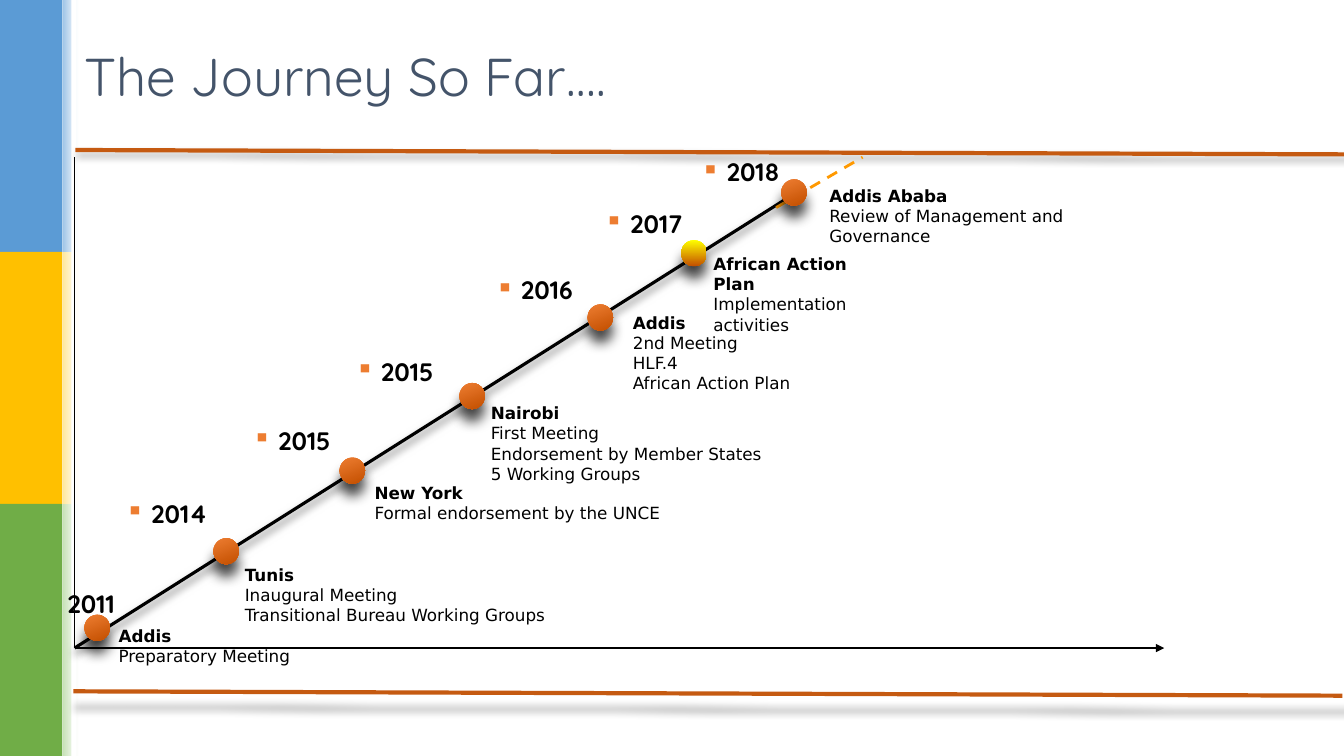
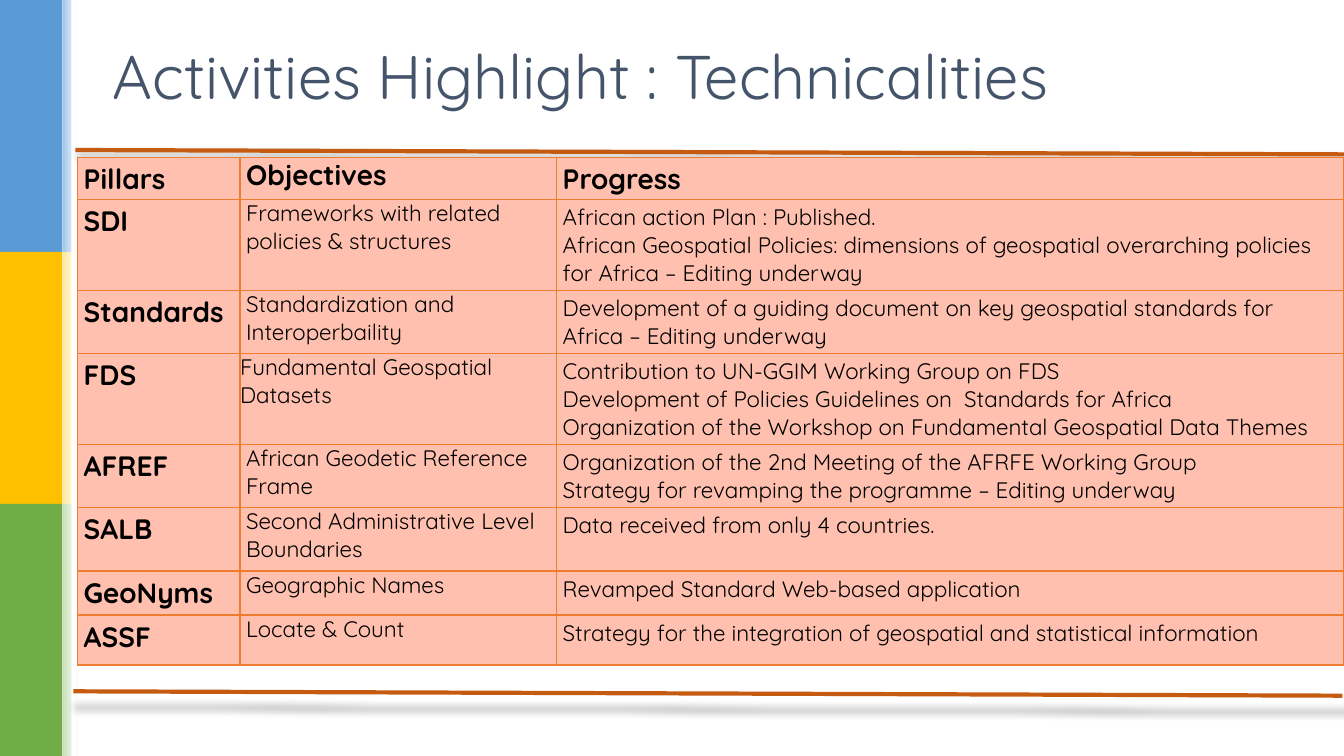
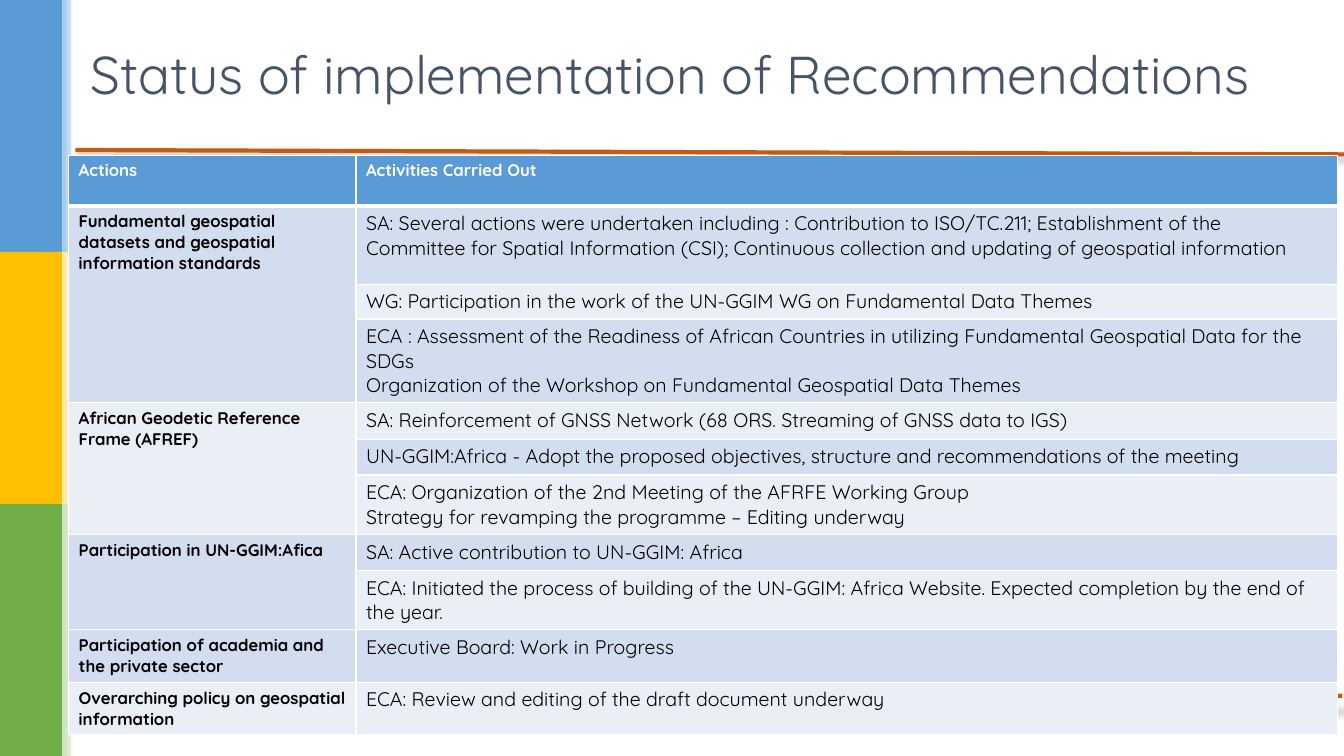
"""Build three slides on the journey, activities and status of a geospatial programme."""
from dataclasses import dataclass
from typing import Any, Optional

import lxml.etree
import pptx
import pptx.dml.color
import pptx.enum.dml
import pptx.enum.shapes
import pptx.enum.text
import pptx.oxml.ns
import pptx.util

Cm = pptx.util.Cm
Pt = pptx.util.Pt
RGBColor = pptx.dml.color.RGBColor
SHAPE = pptx.enum.shapes.MSO_SHAPE
ANCHOR = pptx.enum.text.MSO_ANCHOR
qn = pptx.oxml.ns.qn

BLACK = RGBColor(0x00, 0x00, 0x00)
WHITE = RGBColor(0xFF, 0xFF, 0xFF)
SLATE = RGBColor(0x44, 0x54, 0x6A)
BLUE = RGBColor(0x5B, 0x9B, 0xD5)
GOLD = RGBColor(0xFF, 0xC0, 0x00)
GREEN = RGBColor(0x70, 0xAD, 0x47)
PALE_BLUE = RGBColor(0x9D, 0xC3, 0xE6)
PALE_GOLD = RGBColor(0xFF, 0xE6, 0x99)
PALE_GREEN = RGBColor(0xC5, 0xE0, 0xB4)
RUST = RGBColor(0xC5, 0x5A, 0x11)
ORANGE = RGBColor(0xED, 0x7D, 0x31)
BURNT = RGBColor(0xC3, 0x4F, 0x00)
YELLOW = RGBColor(0xFF, 0xFF, 0x00)
AMBER = RGBColor(0xFF, 0x99, 0x00)
PEACH = RGBColor(0xFF, 0xC0, 0xAF)
ICE = RGBColor(0xD2, 0xDE, 0xEF)
MIST = RGBColor(0xEA, 0xEF, 0xF7)

SANS = "DejaVu Sans"
ROUND = "Quicksand"
WIDE, HIGH = 33.87, 19.05
BAND = 1.57


@dataclass(frozen=True)
class Style:
    """Hold the look of a run."""
    size: float
    color: RGBColor = BLACK
    bold: bool = False
    font: str = ROUND


@dataclass(frozen=True)
class Shade:
    """Hold a soft shadow: blur and drop in points, strength and scale in percent."""
    blur: float
    drop: float
    alpha: int
    scale: int = 100


@dataclass(frozen=True)
class Stop:
    """Hold one step of the journey, with places in centimetres."""
    year: str
    dot: tuple[float, float]
    date: tuple[float, float]
    note: tuple[float, float, float]
    place: str
    facts: tuple[str, ...]
    glow: RGBColor = ORANGE
    angle: int = 291
    mark: bool = True


@dataclass(frozen=True)
class Pillar:
    """Hold one row of the pillar table."""
    name: str
    goal: str
    steps: tuple[str, ...]
    high: float
    inset: float = 0.15


@dataclass(frozen=True)
class Action:
    """Hold one action with the text and height of each of its rows."""
    name: str
    rows: tuple[tuple[float, tuple[str, ...]], ...]


RULE_SHADE = Shade(5, 1, 32, 102)
PATH_SHADE = Shade(6, 3, 60)
DOT_SHADE = Shade(9, 9, 70)
YEAR = Style(18, bold=True)
PLACE = Style(12, bold=True, font=SANS)
FACT = Style(12, font=SANS)

STOPS = (
    Stop("2011", (2.13, 15.49), (1.45, 14.78), (2.74, 15.65, 6.02), "Addis",
         ("Preparatory Meeting",), mark=False),
    Stop("2014", (5.38, 13.56), (2.92, 12.52), (5.92, 14.1, 9), "Tunis",
         ("Inaugural Meeting", "Transitional Bureau Working Groups")),
    Stop("2015", (8.56, 11.53), (6.12, 10.67), (9.19, 12.04, 9.5), "New York",
         ("Formal endorsement by the UNCE",)),
    Stop("2015", (11.58, 9.65), (8.71, 8.94), (12.12, 10.03, 7.87), "Nairobi",
         ("First Meeting", "Endorsement by Member States", "5 Working Groups")),
    Stop("2016", (14.81, 7.67), (12.24, 6.88), (15.7, 7.75, 8.46), "Addis",
         ("2nd Meeting", "HLF.4", "African Action Plan")),
    Stop("2017", (17.17, 6.05), (14.99, 5.21), (17.73, 6.27, 4.85), "African Action Plan",
         ("Implementation activities",), YELLOW, 270),
    Stop("2018", (19.69, 4.52), (17.42, 3.91), (20.65, 4.55, 7.87), "Addis Ababa",
         ("Review of Management and Governance",)),
)

PILLARS = (
    Pillar("SDI", "Frameworks with related policies & structures", (
        "African action Plan : Published.",
        "African Geospatial Policies: dimensions of geospatial overarching policies "
        "for Africa – Editing underway"), 2.3),
    Pillar("Standards", "Standardization and Interoperbaility", (
        "Development of a guiding document on key geospatial standards for Africa "
        "– Editing underway",), 1.58),
    Pillar("FDS", "Fundamental Geospatial Datasets", (
        "Contribution to UN-GGIM Working Group on FDS",
        "Development of Policies Guidelines on  Standards for Africa",
        "Organization of the Workshop on Fundamental Geospatial Data Themes"), 2.3, 0),
    Pillar("AFREF", "African Geodetic Reference Frame", (
        "Organization of the 2nd Meeting of the AFRFE Working Group",
        "Strategy for revamping the programme – Editing underway"), 1.58),
    Pillar("SALB", "Second Administrative Level Boundaries", (
        "Data received from only 4 countries.",), 1.61),
    Pillar("GeoNyms", "Geographic Names", ("Revamped Standard Web-based application",), 1.11),
    Pillar("ASSF", "Locate & Count", (
        "Strategy for the integration of geospatial and statistical information",), 1.26),
)

ACTIONS = (
    Action("Fundamental geospatial datasets and geospatial information standards", (
        (1.97, ("SA: Several actions were undertaken including : Contribution to ISO/TC.211; "
                "Establishment of the Committee for Spatial Information (CSI); Continuous "
                "collection and updating of geospatial information",)),
        (0.88, ("WG: Participation in the work of the UN-GGIM WG on Fundamental Data Themes",)),
        (2.1, ("ECA : Assessment of the Readiness of African Countries in utilizing "
               "Fundamental Geospatial Data for the SDGs",
               "Organization of the Workshop on Fundamental Geospatial Data Themes")))),
    Action("African Geodetic Reference Frame (AFREF)", (
        (0.92, ("SA: Reinforcement of GNSS Network (68 ORS. Streaming of GNSS data to IGS)",)),
        (0.9, ("UN-GGIM:Africa - Adopt the proposed objectives, structure and "
               "recommendations of the meeting",)),
        (1.5, ("ECA: Organization of the 2nd Meeting of the AFRFE Working Group",
               "Strategy for revamping the programme – Editing underway")))),
    Action("Participation in UN-GGIM:Afica", (
        (0.91, ("SA: Active contribution to UN-GGIM: Africa",)),
        (1.49, ("ECA: Initiated the process of building of the UN-GGIM: Africa Website. "
                "Expected completion by the end of the year.",)))),
    Action("Participation of academia and the private sector", (
        (1.32, ("Executive Board: Work in Progress",)),)),
    Action("Overarching policy on geospatial information", (
        (1.32, ("ECA: Review and editing of the draft document underway",)),)),
)


def add_node(root: Any, tag: str, **attrs: object) -> Any:
    """Append a drawing element with the given attributes."""
    return lxml.etree.SubElement(root, qn(tag), {key: str(val) for key, val in attrs.items()})


def add_shade(shape: Any, shade: Optional[Shade]) -> None:
    """Give a shape or line its shadow, or none."""
    props = shape._element.spPr
    for old in props.findall(qn("a:effectLst")):
        props.remove(old)
    effects = add_node(props, "a:effectLst")
    if shade:
        scale = shade.scale * 1000
        outer = add_node(effects, "a:outerShdw", blurRad=Pt(shade.blur), dist=Pt(shade.drop),
                         dir=5400000, sx=scale, sy=scale, algn="ctr", rotWithShape=0)
        add_node(add_node(outer, "a:srgbClr", val=BLACK), "a:alpha", val=shade.alpha * 1000)


def add_line(slide: Any, start: tuple[float, float], end: tuple[float, float],
             color: RGBColor, width: float, shade: Optional[Shade] = None) -> Any:
    """Draw a straight line."""
    line = slide.shapes.add_connector(pptx.enum.shapes.MSO_CONNECTOR.STRAIGHT,
                                      *(Cm(v) for v in start + end))
    line.line.color.rgb = color
    line.line.width = Pt(width)
    add_shade(line, shade)
    return line


def add_block(slide: Any, kind: Any, place: tuple[float, float, float, float],
              color: RGBColor, fade: Optional[RGBColor] = None, angle: int = 0) -> Any:
    """Draw a borderless shape in one colour or fading to a second."""
    block = slide.shapes.add_shape(kind, *(Cm(v) for v in place))
    block.shadow.inherit = False
    block.line.fill.background()
    if fade is None:
        block.fill.solid()
        block.fill.fore_color.rgb = color
    else:
        block.fill.gradient()
        block.fill.gradient_angle = angle
        for stop, tint in zip(block.fill.gradient_stops, (color, fade)):
            stop.color.rgb = tint
    return block


def add_text(frame: Any, lines: list[tuple[str, Style]]) -> None:
    """Fill a text frame with one run to a paragraph."""
    frame.word_wrap = True
    for spot, (words, style) in enumerate(lines):
        para = frame.add_paragraph() if spot else frame.paragraphs[0]
        run = para.add_run()
        run.text = words
        run.font.name = style.font
        run.font.size = Pt(style.size)
        run.font.bold = style.bold
        run.font.color.rgb = style.color


def add_box(slide: Any, place: tuple[float, float, float, float],
            lines: list[tuple[str, Style]]) -> Any:
    """Add a text box and return its frame."""
    frame = slide.shapes.add_textbox(*(Cm(v) for v in place)).text_frame
    add_text(frame, lines)
    return frame


def add_title(slide: Any, words: str, left: float, top: float, width: float, size: float) -> None:
    """Add the slide title."""
    frame = add_box(slide, (left, top, width, 3.68), [(words, Style(size, SLATE))])
    frame.vertical_anchor = ANCHOR.MIDDLE


def add_slide(deck: Any) -> Any:
    """Add a blank slide with the side bands and the two rules."""
    slide = deck.slides.add_slide(deck.slide_layouts[6])
    slide.background.fill.solid()
    slide.background.fill.fore_color.rgb = WHITE
    part = HIGH / 3
    for row, (full, pale) in enumerate(((BLUE, PALE_BLUE), (GOLD, PALE_GOLD),
                                        (GREEN, PALE_GREEN))):
        add_block(slide, SHAPE.RECTANGLE, (0, row * part, BAND, part), full)
        add_block(slide, SHAPE.RECTANGLE, (BAND, row * part, 0.41, part), pale, WHITE)
    add_block(slide, SHAPE.RECTANGLE, (1.8, 0, 0.13, HIGH), WHITE)
    add_line(slide, (1.85, 17.42), (33.83, 17.53), RUST, 3, RULE_SHADE)
    add_line(slide, (1.9, 3.78), (WIDE, 3.89), RUST, 3, RULE_SHADE)
    return slide


def add_grid(slide: Any, left: float, top: float, cols: list[float], rows: list[float]) -> Any:
    """Add a plain table with set column widths and row heights."""
    grid = slide.shapes.add_table(len(rows), len(cols), Cm(left), Cm(top),
                                  Cm(sum(cols)), Cm(sum(rows))).table
    grid.first_row = grid.horz_banding = False
    for col, width in zip(grid.columns, cols):
        col.width = Cm(width)
    for row, height in zip(grid.rows, rows):
        row.height = Cm(height)
    return grid


def paint(cell: Any, color: RGBColor, edge: RGBColor, base: float = 1) -> None:
    """Fill a cell and draw its four borders."""
    cell.fill.solid()
    cell.fill.fore_color.rgb = color
    props = cell._tc.get_or_add_tcPr()
    for spot, (side, width) in enumerate((("L", 1), ("R", 1), ("T", 1), ("B", base))):
        line = add_node(props, f"a:ln{side}", w=Pt(width))
        add_node(add_node(line, "a:solidFill"), "a:srgbClr", val=edge)
        props.insert(spot, line)


def pad(cell: Any, left: float, right: float, ends: float) -> None:
    """Set the margins of a cell."""
    cell.margin_left, cell.margin_right = Cm(left), Cm(right)
    cell.margin_top = cell.margin_bottom = Cm(ends)


def add_stop(slide: Any, stop: Stop) -> None:
    """Draw the dot, year and note of one step."""
    dot = add_block(slide, SHAPE.OVAL, (*stop.dot, 0.64, 0.66), stop.glow, BURNT, stop.angle)
    add_shade(dot, DOT_SHADE)
    frame = add_box(slide, (*stop.date, 2.64, 1.7), [])
    para = frame.paragraphs[0]
    para.line_spacing = 0.9
    if stop.mark:
        props = para._p.get_or_add_pPr()
        props.set("marL", str(Cm(0.64)))
        props.set("indent", str(Cm(-0.64)))
        add_node(add_node(props, "a:buClr"), "a:srgbClr", val=ORANGE)
        add_node(props, "a:buChar", char="▪")
    add_text(frame, [(stop.year, YEAR)])
    left, top, width = stop.note
    lines = [(stop.place, PLACE)] + [(fact, FACT) for fact in stop.facts]
    add_box(slide, (left, top, width, 0.26 + 0.51 * len(lines)), lines)


def draw_path(deck: Any) -> None:
    """Draw the timeline slide."""
    slide = add_slide(deck)
    add_title(slide, "The Journey So Far….", 1.88, 0.05, 31.98, 38)
    root = (1.88, 16.33)
    axis = add_line(slide, root, (29.34, 16.33), BLACK, 1)
    add_node(axis.line._get_or_add_ln(), "a:tailEnd", type="triangle")
    add_line(slide, root, (19.99, 4.9), BLACK, 2.25, PATH_SHADE)
    add_line(slide, (1.88, 3.96), root, BLACK, 1)
    ahead = add_line(slide, (19.56, 5.23), (21.74, 3.96), AMBER, 2)
    ahead.line.dash_style = pptx.enum.dml.MSO_LINE.DASH
    for stop in STOPS:
        add_stop(slide, stop)


def draw_goals(deck: Any) -> None:
    """Draw the pillar table slide."""
    slide = add_slide(deck)
    add_title(slide, "Activities Highlight : Technicalities", 2.59, 0.05, 29.21, 44)
    grid = add_grid(slide, 1.96, 3.96, [4.09, 7.98, 19.84],
                    [1.06] + [pillar.high for pillar in PILLARS])
    head, body = Style(20, bold=True), Style(16)
    rows = [(0.15, [[(word, head)] for word in ("Pillars", "Objectives", "Progress")])]
    rows += [(pillar.inset, [[(pillar.name, head)], [(pillar.goal, body)],
                             [(step, body) for step in pillar.steps]]) for pillar in PILLARS]
    for row, (inset, texts) in enumerate(rows):
        for col, lines in enumerate(texts):
            cell = grid.cell(row, col)
            paint(cell, PEACH, ORANGE)
            if col == 1:
                pad(cell, inset, 0, 0)
            else:
                pad(cell, 0.15, 0.15, 0.1)
            add_text(cell.text_frame, lines)


def draw_state(deck: Any) -> None:
    """Draw the status table slide."""
    slide = add_slide(deck)
    rows = [row for action in ACTIONS for row in action.rows]
    grid = add_grid(slide, 1.73, 3.91, [7.24, 24.74], [1.28] + [high for high, _ in rows])
    for col, word in enumerate(("Actions", "Activities Carried Out")):
        paint(grid.cell(0, col), BLUE, WHITE, 3)
        add_text(grid.cell(0, col).text_frame, [(word, Style(12, WHITE, True))])
    for row, (_, lines) in enumerate(rows, 1):
        for col in range(2):
            paint(grid.cell(row, col), ICE if row % 2 else MIST, WHITE)
        add_text(grid.cell(row, 1).text_frame, [(line, Style(14)) for line in lines])
    first = 1
    for action in ACTIONS:
        last = first + len(action.rows) - 1
        cell = grid.cell(first, 0)
        if last > first:
            cell.merge(grid.cell(last, 0))
        add_text(cell.text_frame, [(action.name, Style(12, bold=True))])
        first = last + 1
    add_title(slide, "Status of implementation of Recommendations", 2.03, 0, 31.67, 38)


def main() -> None:
    """Build and save the deck."""
    deck = pptx.Presentation()
    deck.slide_width, deck.slide_height = Cm(WIDE), Cm(HIGH)
    draw_path(deck)
    draw_goals(deck)
    draw_state(deck)
    deck.save("out.pptx")


if __name__ == "__main__":
    main()
